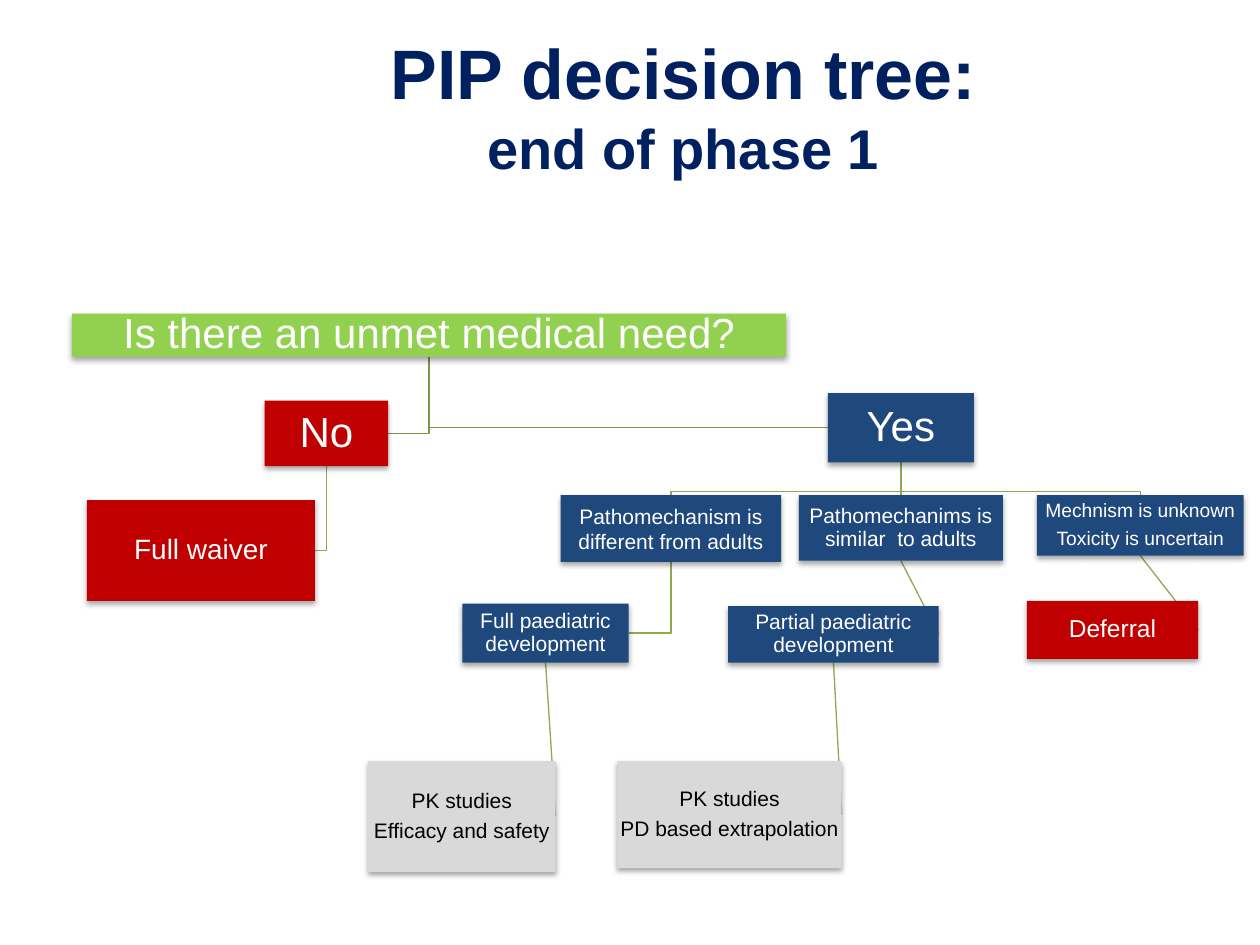
from collections import namedtuple

from lxml.etree import SubElement
from pptx import Presentation
from pptx.dml.color import RGBColor
from pptx.enum.shapes import MSO_CONNECTOR as Link, MSO_SHAPE as Preset
from pptx.enum.text import MSO_ANCHOR as Anchor, MSO_AUTO_SIZE as AutoSize, PP_ALIGN as Align
from pptx.oxml.ns import qn
from pptx.util import Inches, Pt

FONT = "Arial"
NAVY, GREEN, RED, BLUE, GREY = "002060", "92D050", "C00000", "1F497D", "D9D9D9"
WHITE, BLACK = "FFFFFF", "000000"
TRUNK, BRANCH = "7C9647", "8DAA51"
LINE_WIDTH = Pt(0.75)

Node = namedtuple("Node", "left top width height fill size lines spacing", defaults=[0.9])

NODES = {
    "need": Node(0, 0, 5.67, 0.34, GREEN, 24, ["Is there an unmet medical need?"]),
    "no": Node(1.53, 0.69, 0.98, 0.52, RED, 24, ["No"]),
    "waiver": Node(0.12, 1.48, 1.81, 0.8, RED, 16, ["Full waiver"]),
    "yes": Node(6, 0.63, 1.16, 0.55, BLUE, 24, ["Yes"]),
    "different": Node(3.88, 1.44, 1.75, 0.53, BLUE, 12,
                      ["Pathomechanism is different from adults"], 1.0),
    "full": Node(3.1, 2.3, 1.32, 0.47, BLUE, 12, ["Full paediatric development"]),
    "full studies": Node(2.35, 3.55, 1.49, 0.88, GREY, 12,
                         ["PK studies", "Efficacy and safety"]),
    "similar": Node(5.77, 1.44, 1.62, 0.52, BLUE, 12,
                    ["Pathomechanims is similar  to adults"]),
    "partial": Node(5.21, 2.32, 1.67, 0.45, BLUE, 12, ["Partial paediatric development"]),
    "partial studies": Node(4.33, 3.55, 1.78, 0.85, GREY, 12,
                            ["PK studies", "PD based extrapolation"]),
    "unknown": Node(7.66, 1.44, 1.64, 0.48, BLUE, 11,
                    ["Mechnism is unknown", "Toxicity is uncertain"]),
    "deferral": Node(7.58, 2.28, 1.36, 0.46, RED, 14, ["Deferral"]),
}

LINKS = [
    ("unknown", "deferral", "slant", BRANCH),
    ("yes", "unknown", "fork", BRANCH),
    ("partial", "partial studies", "slant", BRANCH),
    ("similar", "partial", "slant", BRANCH),
    ("yes", "similar", "drop", BRANCH),
    ("full", "full studies", "slant", BRANCH),
    ("different", "full", "elbow", BRANCH),
    ("yes", "different", "fork", BRANCH),
    ("need", "yes", "elbow", TRUNK),
    ("no", "waiver", "elbow", BRANCH),
    ("need", "no", "elbow", TRUNK),
]


def rgb(color):
    return RGBColor.from_string(color)


def add_run(paragraph, text, size, color, bold=False):
    run = paragraph.add_run()
    run.text = text
    run.font.name = FONT
    run.font.size = Pt(size)
    run.font.bold = bold
    run.font.color.rgb = rgb(color)


def add_soft_shadow(shape):
    effects = SubElement(shape._element.spPr, qn("a:effectLst"))
    shadow = SubElement(effects, qn("a:outerShdw"), blurRad="40000", dist="23000",
                        dir="5400000", rotWithShape="0")
    black = SubElement(shadow, qn("a:srgbClr"), val=BLACK)
    SubElement(black, qn("a:alpha"), val="35000")


def add_title(slide, left, top, width, height):
    title = slide.shapes.title
    title.left, title.top = Inches(left), Inches(top)
    title.width, title.height = Inches(width), Inches(height)
    frame = title.text_frame
    frame.auto_size = AutoSize.NONE
    frame.vertical_anchor = Anchor.MIDDLE
    heading = frame.paragraphs[0]
    heading.alignment = Align.CENTER
    add_run(heading, "PIP decision tree:", 40, NAVY, bold=True)
    heading.add_line_break()
    add_run(heading, "end of phase 1", 32, NAVY, bold=True)


def link_points(parent, child, route):
    start_x, start_y = parent.left + parent.width / 2, parent.top + parent.height
    child_x, child_y = child.left + child.width / 2, child.top + child.height / 2
    side_x = child.left if child.left > start_x else child.left + child.width
    fork_y = child.top - 0.03
    middle = {
        "slant": [(side_x, child_y)],
        "drop": [(start_x, child.top)],
        "elbow": [(start_x, child_y), (side_x, child_y)],
        "fork": [(start_x, fork_y), (child_x, fork_y), (child_x, child.top)],
    }
    return [(start_x, start_y)] + middle[route]


def add_link(slide, points, color):
    corners = [(Inches(x), Inches(y)) for x, y in points]
    if len(corners) == 2:
        link = slide.shapes.add_connector(Link.STRAIGHT, *corners[0], *corners[1])
        SubElement(link._element.spPr, qn("a:effectLst"))
    else:
        outline = slide.shapes.build_freeform(*corners[0])
        outline.add_line_segments(corners[1:], close=False)
        link = outline.convert_to_shape()
        link.fill.background()
        link.shadow.inherit = False
    link.line.color.rgb = rgb(color)
    link.line.width = LINE_WIDTH


def add_node(slide, left, top, node):
    box = slide.shapes.add_shape(Preset.RECTANGLE, Inches(left + node.left),
                                 Inches(top + node.top), Inches(node.width),
                                 Inches(node.height))
    box.fill.solid()
    box.fill.fore_color.rgb = rgb(node.fill)
    box.line.fill.background()
    add_soft_shadow(box)

    frame = box.text_frame
    frame.word_wrap = True
    frame.vertical_anchor = Anchor.MIDDLE
    inset = Inches(0.02 if node.size == 24 else 0.01)
    frame.margin_left = frame.margin_right = inset
    frame.margin_top = frame.margin_bottom = inset
    for index, line in enumerate(node.lines):
        paragraph = frame.add_paragraph() if index else frame.paragraphs[0]
        paragraph.alignment = Align.CENTER
        paragraph.line_spacing = node.spacing
        if index:
            paragraph.space_before = Pt(0.35 * node.size)
        add_run(paragraph, line, node.size, BLACK if node.fill == GREY else WHITE)


def add_tree(slide, left, top):
    for parent, child, route, color in LINKS:
        points = link_points(NODES[parent], NODES[child], route)
        add_link(slide, [(left + x, top + y) for x, y in points], color)
    for node in NODES.values():
        add_node(slide, left, top, node)


def main():
    deck = Presentation()
    deck.slide_width, deck.slide_height = Inches(10), Inches(7.5)
    slide = deck.slides.add_slide(deck.slide_layouts[5])
    add_title(slide, 1.61, 0.21, 7.63, 1.25)
    add_tree(slide, 0.57, 2.49)
    deck.save("out.pptx")


if __name__ == "__main__":
    main()
